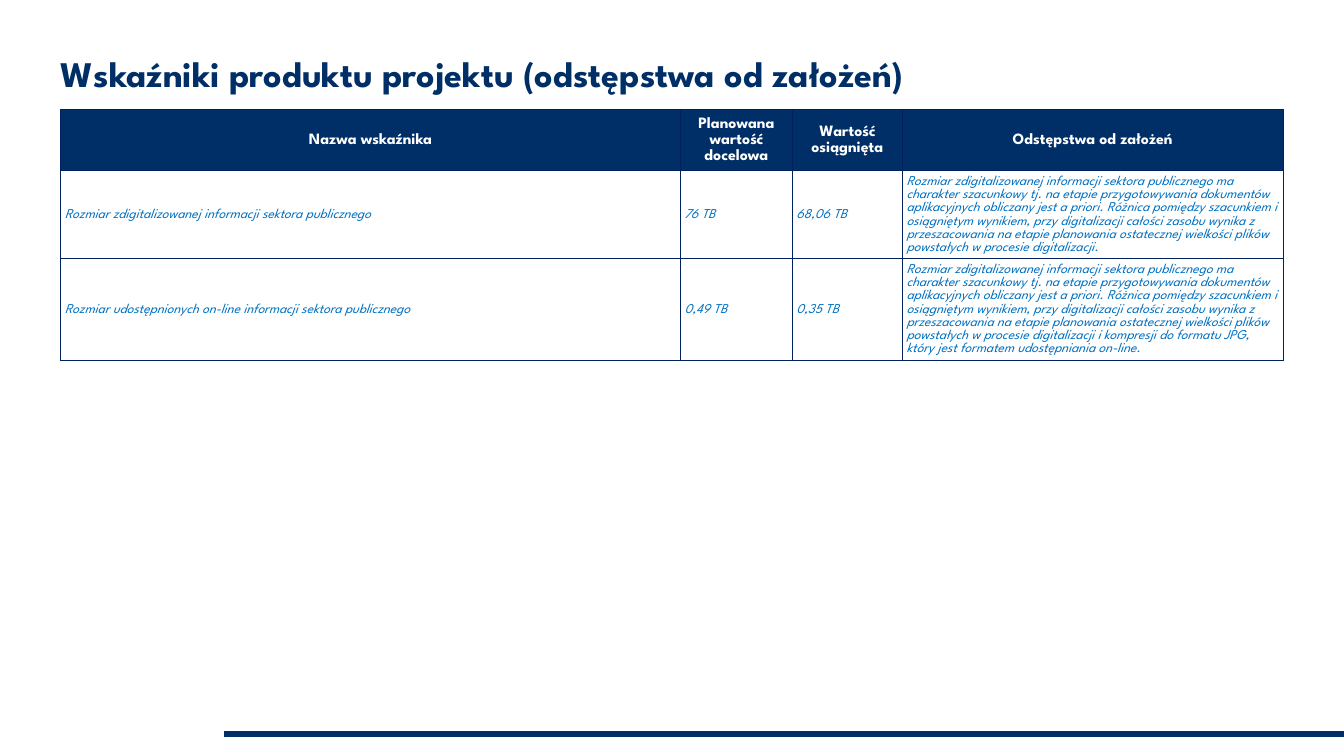
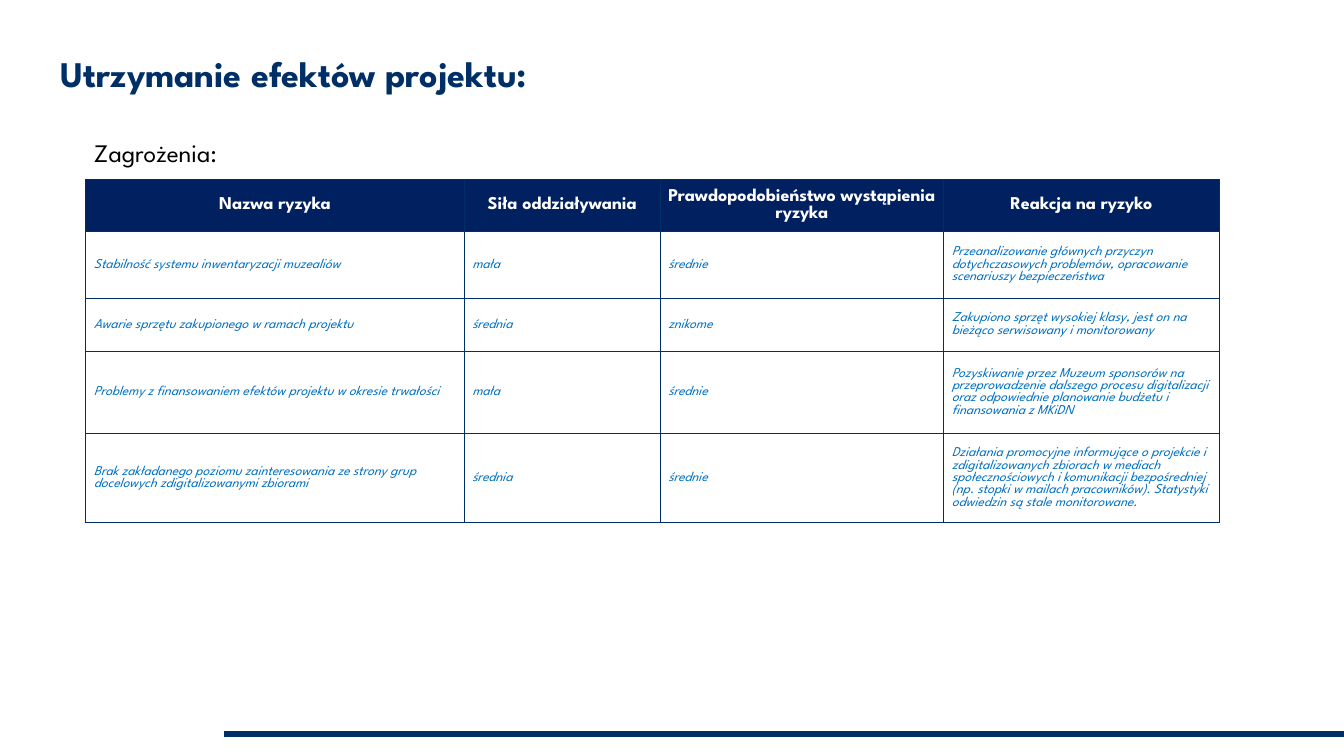
from lxml import etree
from pptx import Presentation
from pptx.dml.color import RGBColor
from pptx.enum.shapes import MSO_CONNECTOR
from pptx.enum.text import MSO_ANCHOR, MSO_AUTO_SIZE, PP_ALIGN
from pptx.oxml.ns import qn
from pptx.util import Inches, Pt

LEFT, CENTER = PP_ALIGN.LEFT, PP_ALIGN.CENTER
MIDDLE, BOTTOM = MSO_ANCHOR.MIDDLE, MSO_ANCHOR.BOTTOM
STRAIGHT = MSO_CONNECTOR.STRAIGHT
NO_FIT = MSO_AUTO_SIZE.NONE

FONT = "League Spartan"
NAVY, DARK, BLUE = "002F67", "002060", "0070C0"
WHITE, BLACK = "FFFFFF", "000000"
WIDE, HIGH = 16.59, 9.33


def color(code):
    return RGBColor.from_string(code)


class Deck:
    """Holds the shared style and the slide being built."""

    def __init__(self):
        self.file = Presentation()
        self.file.slide_width = Inches(WIDE)
        self.file.slide_height = Inches(HIGH)
        self.slide = None

    def page(self, title):
        layout = self.file.slide_layouts[5]
        self.slide = self.file.slides.add_slide(layout)
        self.rule(2.76, WIDE, 9.06)
        self.title(title)

    def rule(self, start, end, y):
        line = self.slide.shapes.add_connector(
            STRAIGHT, Inches(start), Inches(y), Inches(end), Inches(y))
        line.line.color.rgb = color(NAVY)
        line.line.width = Pt(5.25)
        etree.SubElement(line._element.spPr, qn("a:effectLst"))

    def title(self, text):
        shape = self.slide.shapes.title
        shape.left, shape.top = Inches(0.75), Inches(0)
        shape.width, shape.height = Inches(13.84), Inches(1.18)
        frame = shape.text_frame
        frame.auto_size = NO_FIT
        frame.vertical_anchor = BOTTOM
        self.inset(frame, 0, 0)
        self.style(frame, text, 32, NAVY, bold=True, space=0.9)

    def label(self, text, x, y, w, h):
        box = self.slide.shapes.add_textbox(
            Inches(x), Inches(y), Inches(w), Inches(h))
        box.text_frame.word_wrap = True
        self.style(box.text_frame, text, 22.4, BLACK)

    def table(self, x, y, cols, tall, rows, head, edge, size,
              pads=((0.1, 0.05), (0.1, 0.05)), space=1.0):
        """Pads are (side, end) insets of the header and of the body."""
        grid = self.slide.shapes.add_table(
            len(rows), len(cols), Inches(x), Inches(y),
            Inches(sum(cols)), Inches(sum(tall))).table
        grid.horz_banding = False
        for col, width in zip(grid.columns, cols):
            col.width = Inches(width)
        for r, texts in enumerate(rows):
            grid.rows[r].height = Inches(tall[r])
            top = r == 0
            for c, text in enumerate(texts):
                cell = grid.cell(r, c)
                self.border(cell, edge)
                cell.fill.solid()
                cell.fill.fore_color.rgb = color(head if top else WHITE)
                cell.vertical_anchor = MIDDLE
                self.inset(cell, *pads[0 if top else 1])
                self.style(cell.text_frame, text, size if top else 12,
                           WHITE if top else BLUE, bold=top,
                           slant=not top, align=CENTER if top else LEFT,
                           space=space)

    def border(self, cell, edge):
        props = cell._tc.get_or_add_tcPr()
        for side in ("lnL", "lnR", "lnT", "lnB"):
            line = etree.SubElement(props, qn("a:" + side), w=str(Pt(1)))
            fill = etree.SubElement(line, qn("a:solidFill"))
            etree.SubElement(fill, qn("a:srgbClr"), val=edge)

    def inset(self, item, side, end):
        item.margin_left = item.margin_right = Inches(side)
        item.margin_top = item.margin_bottom = Inches(end)

    def style(self, frame, text, size, shade, bold=False, slant=False,
              align=LEFT, space=1.0):
        frame.text = text
        para = frame.paragraphs[0]
        para.alignment = align
        para.line_spacing = space
        for run in para.runs:
            font = run.font
            font.name, font.size = FONT, Pt(size)
            font.bold, font.italic = bold, slant
            font.color.rgb = color(shade)


CAUSE = (
    "Rozmiar zdigitalizowanej informacji sektora publicznego ma charakter "
    "szacunkowy tj. na etapie przygotowywania dokumentów aplikacyjnych "
    "obliczany jest a priori. Różnica pomiędzy szacunkiem i osiągniętym "
    "wynikiem, przy digitalizacji całości zasobu wynika z przeszacowania na "
    "etapie planowania ostatecznej wielkości plików powstałych w procesie "
    "digitalizacji")

GOALS = [
    ("Nazwa wskaźnika", "Planowana wartość docelowa", "Wartość osiągnięta",
     "Odstępstwa od założeń"),
    ("Rozmiar zdigitalizowanej informacji sektora publicznego",
     "76 TB", "68,06 TB", CAUSE + "."),
    ("Rozmiar udostępnionych on-line informacji sektora publicznego",
     "0,49 TB", "0,35 TB",
     CAUSE + " i kompresji do formatu JPG, który jest formatem "
     "udostępniania on-line."),
]

RISKS = [
    ("Nazwa ryzyka", "Siła oddziaływania",
     "Prawdopodobieństwo wystąpienia ryzyka", "Reakcja na ryzyko"),
    ("Stabilność systemu inwentaryzacji muzealiów", "mała", "średnie",
     "Przeanalizowanie głównych przyczyn dotychczasowych problemów, "
     "opracowanie scenariuszy bezpieczeństwa"),
    ("Awarie sprzętu zakupionego w ramach projektu", "średnia", "znikome",
     "Zakupiono sprzęt wysokiej klasy, jest on na bieżąco serwisowany "
     "i monitorowany"),
    ("Problemy z finansowaniem efektów projektu w okresie trwałości",
     "mała", "średnie",
     "Pozyskiwanie przez Muzeum sponsorów na przeprowadzenie dalszego "
     "procesu digitalizacji oraz odpowiednie planowanie budżetu "
     "i finansowania z MKiDN"),
    ("Brak zakładanego poziomu zainteresowania ze strony grup docelowych "
     "zdigitalizowanymi zbiorami", "średnia", "średnie",
     "Działania promocyjne informujące o projekcie i zdigitalizowanych "
     "zbiorach w mediach społecznościowych i komunikacji bezpośredniej "
     "(np. stopki w mailach pracowników). Statystyki odwiedzin są stale "
     "monitorowane."),
]


def main():
    deck = Deck()

    # Product indicators
    deck.page("Wskaźniki produktu projektu (odstępstwa od założeń)")
    deck.table(0.75, 1.35, (7.65, 1.38, 1.36, 4.7), (0.76, 1.08, 1.25),
               GOALS, NAVY, DARK, 14,
               pads=((0.07, 0), (0.05, 0.05)), space=1.07)

    # Risks to the project's results
    deck.page("Utrzymanie efektów projektu:")
    deck.label("Zagrożenia:", 1.06, 1.65, 14.85, 0.48)
    deck.table(1.06, 2.22, (4.67, 2.42, 3.5, 3.4),
               (0.63, 0.83, 0.65, 1.02, 1.1), RISKS, DARK, NAVY, 16)

    deck.file.save("out.pptx")


if __name__ == "__main__":
    main()
